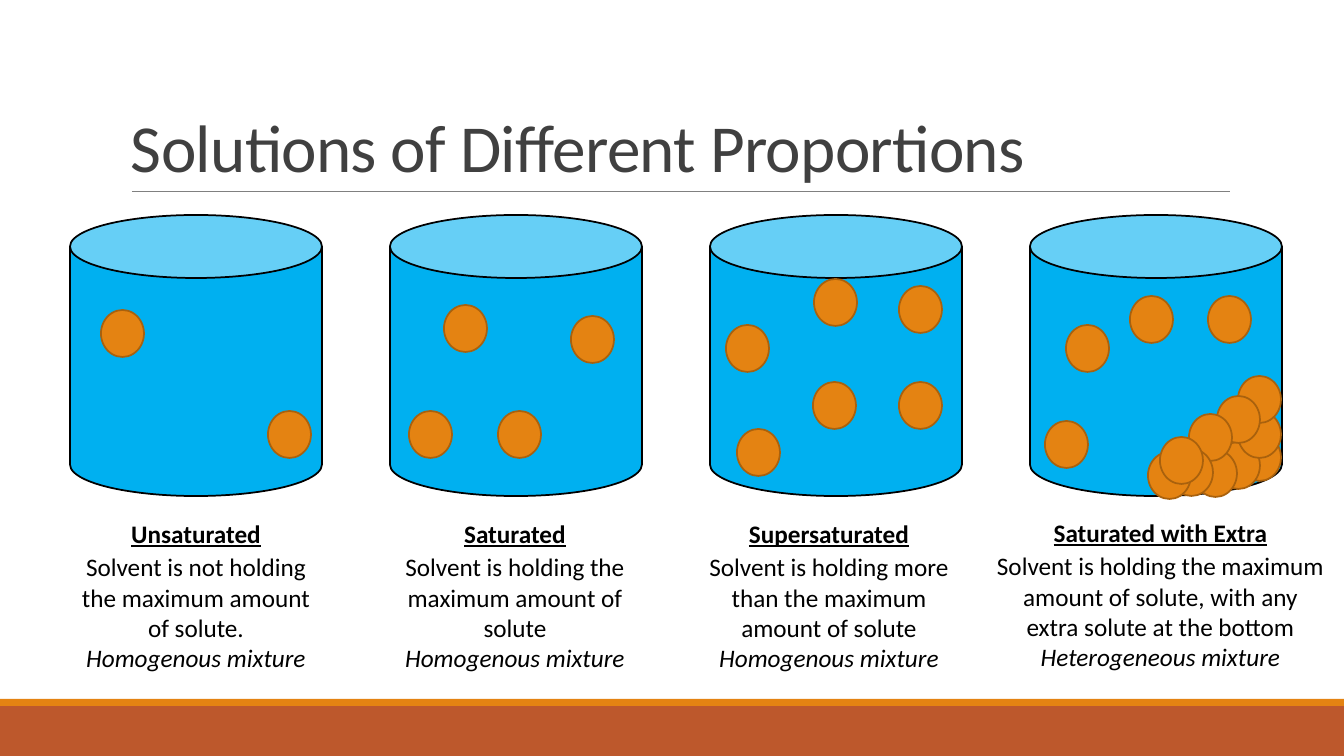
from lxml import etree
from pptx import Presentation
from pptx.dml.color import RGBColor
from pptx.enum.shapes import MSO_CONNECTOR, MSO_SHAPE as SHAPE
from pptx.enum.text import MSO_ANCHOR, MSO_AUTO_SIZE, PP_ALIGN
from pptx.oxml.ns import qn
from pptx.util import Emu, Pt

TITLE = "Solutions of Different Proportions"

# Particle positions: px from the beaker's left edge, px from the slide top
BEAKERS = [
    {"name": "Unsaturated",
     "text": "Solvent is not holding the maximum amount of solute.",
     "mixture": "Homogenous mixture",
     "caption": (70, 513, 252, 166),
     "particles": [(31, 310), (198, 411)]},
    {"name": "Saturated",
     "text": "Solvent is holding the maximum amount of solute",
     "mixture": "Homogenous mixture",
     "caption": (389, 513, 252, 166),
     "particles": [(19, 411), (54, 305), (181, 316), (108, 411)]},
    {"name": "Supersaturated",
     "text": "Solvent is holding more than the maximum amount of solute",
     "mixture": "Homogenous mixture",
     "caption": (696, 513, 266, 166),
     "particles": [(16, 325), (189, 286), (104, 279), (189, 382), (103, 382),
                   (27, 429)]},
    {"name": "Saturated with Extra",
     "text": "Solvent is holding the maximum amount of solute, "
             "with any extra solute at the bottom",
     "mixture": "Heterogeneous mixture",
     "caption": (986, 512, 349, 166),
     "particles": [(36, 325), (178, 296), (15, 421), (100, 296), (208, 434),
                   (187, 442), (164, 450), (208, 411), (208, 376), (187, 396),
                   (159, 414), (140, 449), (118, 452), (130, 437)]},
]

SLIDE_W, SLIDE_H = 1344, 756
BEAKER_LEFT, BEAKER_TOP, BEAKER_W, BEAKER_H, BEAKER_STEP = 70, 215, 252, 281, 320
PARTICLE_W, PARTICLE_H = 43, 47

FONT = "Calibri"
BLACK = RGBColor(0x00, 0x00, 0x00)
TITLE_GREY = RGBColor(0x40, 0x40, 0x40)
RULE_GREY = RGBColor(0x80, 0x80, 0x80)
WATER = RGBColor(0x00, 0xB0, 0xF0)
ORANGE = RGBColor(0xE4, 0x83, 0x12)
DARK_ORANGE = RGBColor(0xA9, 0x61, 0x0D)
RUST = RGBColor(0xBD, 0x58, 0x2C)


def px(n):
    return Emu(round(n * 914400 / 100.8))


def add_shape(s, kind, box, fill, line=None):
    sp = s.shapes.add_shape(kind, *map(px, box))
    sp.shadow.inherit = False
    sp.fill.solid()
    sp.fill.fore_color.rgb = fill
    if line is None:
        sp.line.fill.background()
    else:
        sp.line.color.rgb = line
        sp.line.width = Pt(1.25)


def add_text_frame(s, box):
    tf = s.shapes.add_textbox(*map(px, box)).text_frame
    tf.word_wrap = True
    return tf


def add_run(p, text, color, **font):
    r = p.add_run()
    r.text = text
    r.font.name = FONT
    r.font.color.rgb = color
    for key, value in font.items():
        setattr(r.font, key, value)
    return r


def add_title(s):
    tf = add_text_frame(s, (121, 31, 1109, 160))
    tf.vertical_anchor = MSO_ANCHOR.BOTTOM
    p = tf.paragraphs[0]
    p.line_spacing = 0.85
    r = add_run(p, TITLE, TITLE_GREY, size=Pt(48))
    r.font._element.set("spc", "-50")

    rule = s.shapes.add_connector(MSO_CONNECTOR.STRAIGHT,
                                  px(132), px(191), px(1230), px(191))
    rule.line.color.rgb = RULE_GREY
    rule.line.width = Pt(0.5)
    etree.SubElement(rule._element.spPr, qn("a:effectLst"))


def add_caption(s, beaker):
    tf = add_text_frame(s, beaker["caption"])
    tf.auto_size = MSO_AUTO_SIZE.SHAPE_TO_FIT_TEXT
    lines = [(beaker["name"], {"bold": True, "underline": True}),
             (beaker["text"], {}),
             (beaker["mixture"], {"italic": True})]
    for i, (text, font) in enumerate(lines):
        p = tf.add_paragraph() if i else tf.paragraphs[0]
        p.alignment = PP_ALIGN.CENTER
        add_run(p, text, BLACK, size=Pt(18), **font)
    tf.paragraphs[0].space_after = Pt(2.4)


def main():
    prs = Presentation()
    prs.slide_width, prs.slide_height = px(SLIDE_W), px(SLIDE_H)
    s = prs.slides.add_slide(prs.slide_layouts[6])

    add_shape(s, SHAPE.RECTANGLE, (0, 706, SLIDE_W, 50), RUST)
    add_shape(s, SHAPE.RECTANGLE, (0, 699, SLIDE_W, 7), ORANGE)
    add_title(s)
    for i, beaker in enumerate(BEAKERS):
        left = BEAKER_LEFT + i * BEAKER_STEP
        add_shape(s, SHAPE.CAN, (left, BEAKER_TOP, BEAKER_W, BEAKER_H), WATER, BLACK)
        for x, y in beaker["particles"]:
            add_shape(s, SHAPE.FLOWCHART_CONNECTOR,
                      (left + x, y, PARTICLE_W, PARTICLE_H), ORANGE, DARK_ORANGE)
        add_caption(s, beaker)

    prs.save("out.pptx")


if __name__ == "__main__":
    main()
